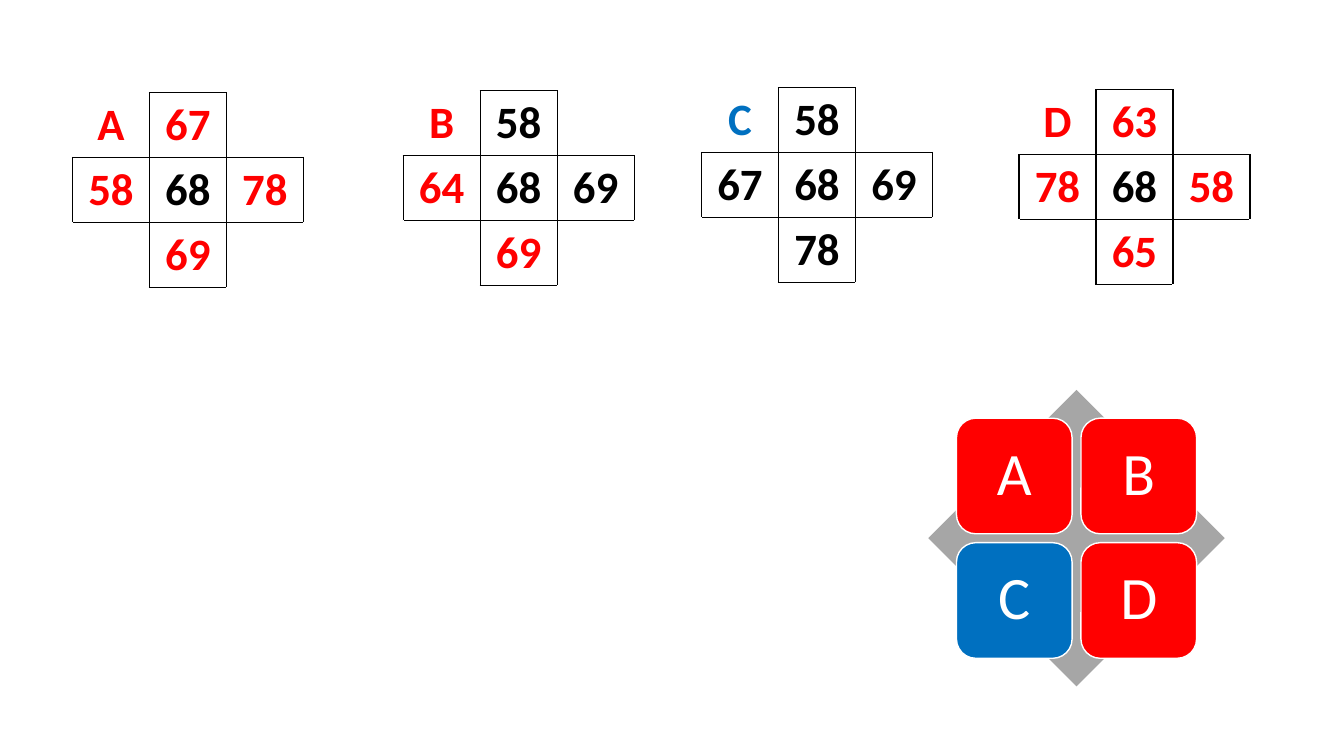
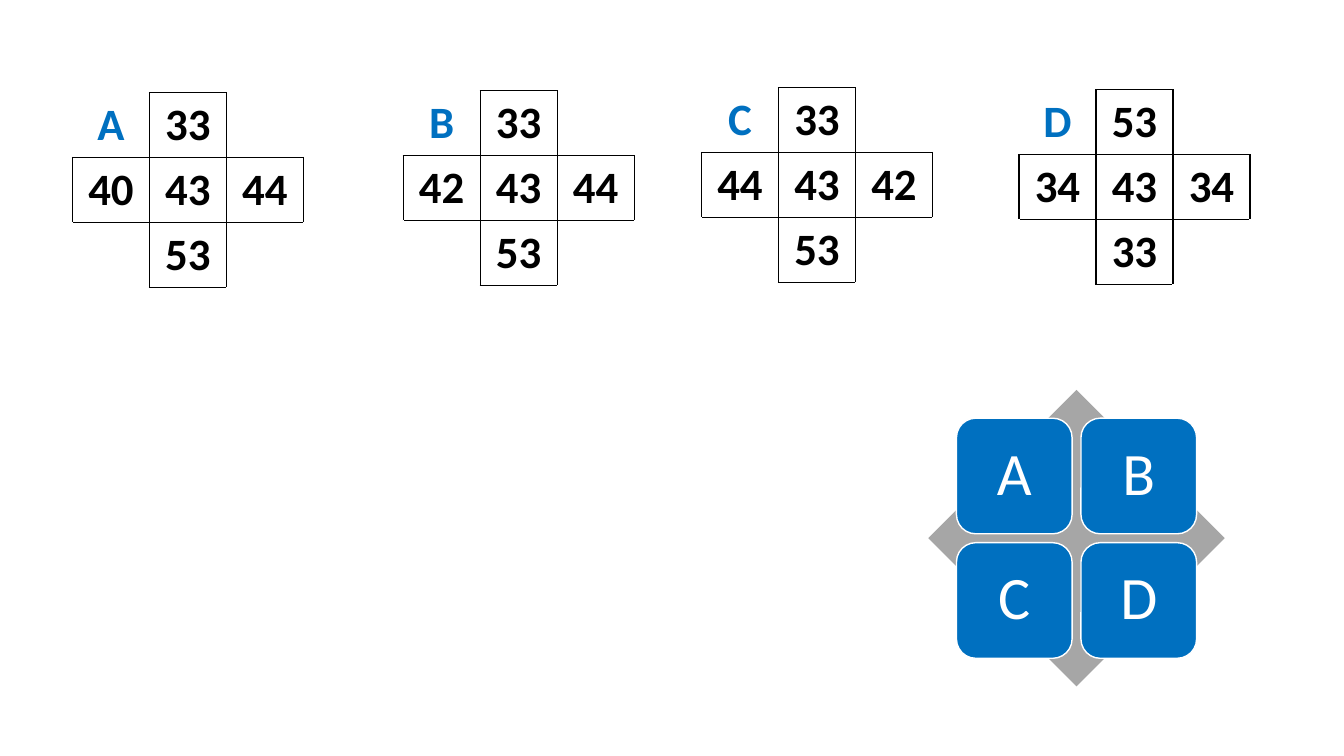
from lxml.etree import SubElement
from pptx import Presentation
from pptx.dml.color import RGBColor
from pptx.enum.shapes import MSO_SHAPE
from pptx.enum.text import MSO_ANCHOR, PP_ALIGN
from pptx.oxml.ns import qn
from pptx.util import Pt

FONT = "Calibri"
RED, BLUE, BLACK, WHITE, GRAY = "FF0000", "0070C0", "000000", "FFFFFF", "A6A6A6"

# Left and top of each cross
SPOTS = {"A": (51.8, 66.2), "B": (288, 64.8), "C": (501.1, 62.6), "D": (727.9, 64.1)}
COL, ROW = 55, 46.3
# Row and column of top, left, middle, right and bottom
CELLS = [(0, 1), (1, 0), (1, 1), (1, 2), (2, 1)]
# The diamond sets the size of the whole matrix
LEFT, TOP, SIDE = 663.1, 278.6, 211.7

# Numbers from top to bottom of each cross; a star marks a wrong one
SLIDES = [
    {"A": "*67 *58 68 *78 *69", "B": "58 *64 68 69 *69",
     "C": "58 67 68 69 78", "D": "*63 *78 68 *58 *65"},
    {"A": "33 40 43 44 53", "B": "33 42 43 44 53",
     "C": "33 44 43 42 53", "D": "53 34 43 34 33"},
]


def paint(target, color):
    target.solid()
    target.fore_color.rgb = RGBColor.from_string(color)


def write(frame, text, size=32, color=BLACK, bold=False, space=None):
    para = frame.paragraphs[0]
    para.alignment = PP_ALIGN.CENTER
    para.line_spacing = space
    run = para.add_run()
    run.text = text
    run.font.name = FONT
    run.font.size = Pt(size)
    run.font.bold = bold
    run.font.color.rgb = RGBColor.from_string(color)


def edge(cell, side, color):
    """Draw one border of a cell; side is L, R, T or B."""
    line = SubElement(cell._tc.get_or_add_tcPr(), qn("a:ln" + side), w=str(Pt(1)))
    fill = SubElement(line, qn("a:solidFill"))
    SubElement(fill, qn("a:srgbClr"), val=color)


def frame_cell(cell, row, col):
    """Give black borders, but white ones on the outside of a corner."""
    corner = row != 1 and col != 1
    outer = {"L": col == 0, "R": col == 2, "T": row == 0, "B": row == 2}
    for side, out in outer.items():
        edge(cell, side, WHITE if corner and out else BLACK)
    paint(cell.fill, WHITE)


def label_color(values):
    return RED if "*" in values else BLUE


def add_cross(slide, name, values):
    left, top = SPOTS[name]
    table = slide.shapes.add_table(
        3, 3, Pt(left), Pt(top), Pt(3 * COL), Pt(3 * ROW)).table
    table.first_row = table.horz_banding = False
    for i in range(3):
        table.columns[i].width = Pt(COL)
        table.rows[i].height = Pt(ROW)
        for j in range(3):
            frame_cell(table.cell(i, j), i, j)
    write(table.cell(0, 0).text_frame, name, color=label_color(values), bold=True)
    for (row, col), value in zip(CELLS, values.split()):
        color = RED if value.startswith("*") else BLACK
        write(table.cell(row, col).text_frame, value.strip("*"), color=color, bold=True)


def add_shape(slide, kind, left, top, side, color):
    shape = slide.shapes.add_shape(kind, Pt(left), Pt(top), Pt(side), Pt(side))
    shape.shadow.inherit = False
    paint(shape.fill, color)
    shape.line.fill.background()
    return shape


def add_tile(slide, left, top, name, color):
    tile = add_shape(slide, MSO_SHAPE.ROUNDED_RECTANGLE, left, top, 0.39 * SIDE, color)
    paint(tile.line.fill, WHITE)
    tile.line.width = Pt(1)
    frame = tile.text_frame
    frame.word_wrap = True
    frame.vertical_anchor = MSO_ANCHOR.MIDDLE
    write(frame, name, size=43, color=WHITE, space=0.9)


def add_matrix(slide, crosses):
    add_shape(slide, MSO_SHAPE.DIAMOND, LEFT, TOP, SIDE, GRAY)
    inset, step = 0.095 * SIDE, 0.42 * SIDE
    for i, (name, values) in enumerate(crosses.items()):
        row, col = divmod(i, 2)
        add_tile(slide, LEFT + inset + col * step, TOP + inset + row * step,
                 name, label_color(values))


def main():
    deck = Presentation()
    deck.slide_width, deck.slide_height = Pt(960), Pt(540)
    blank = deck.slide_layouts[6]
    for crosses in SLIDES:
        slide = deck.slides.add_slide(blank)
        for name, values in crosses.items():
            add_cross(slide, name, values)
        add_matrix(slide, crosses)
    deck.save("out.pptx")


if __name__ == "__main__":
    main()
